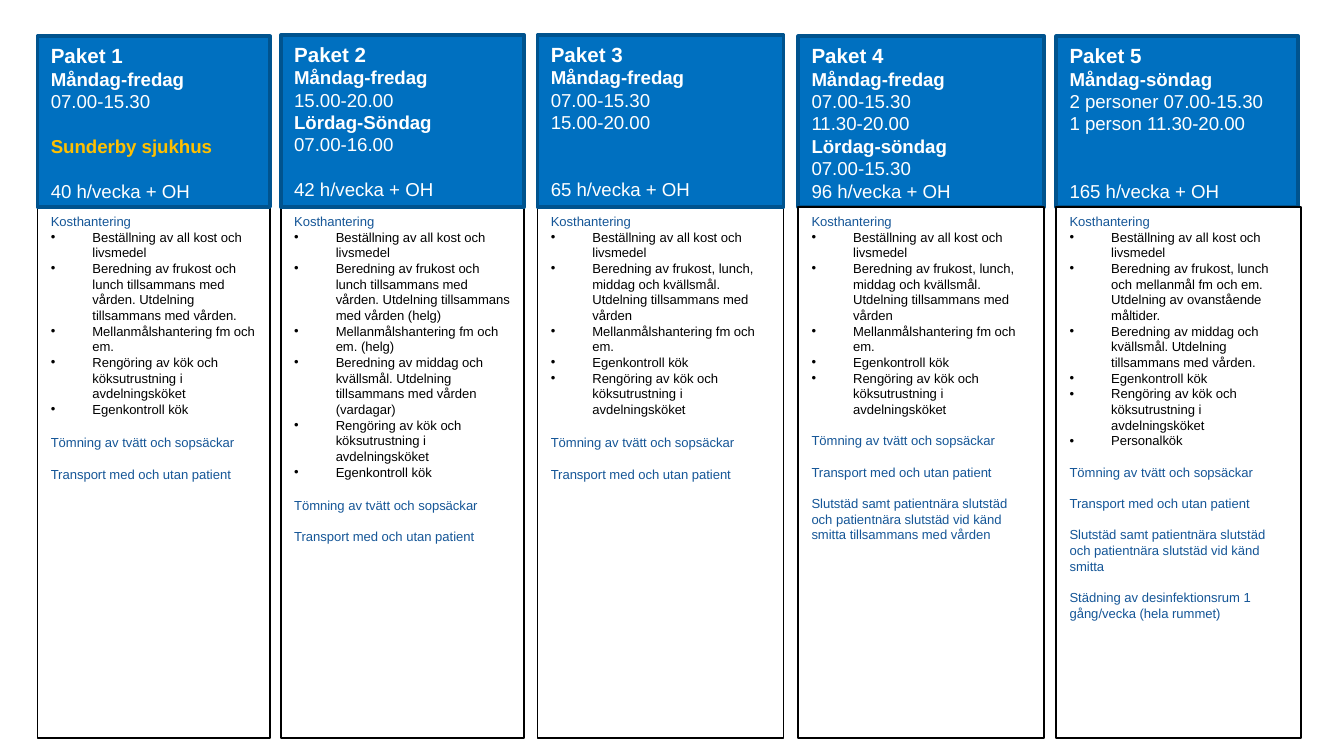
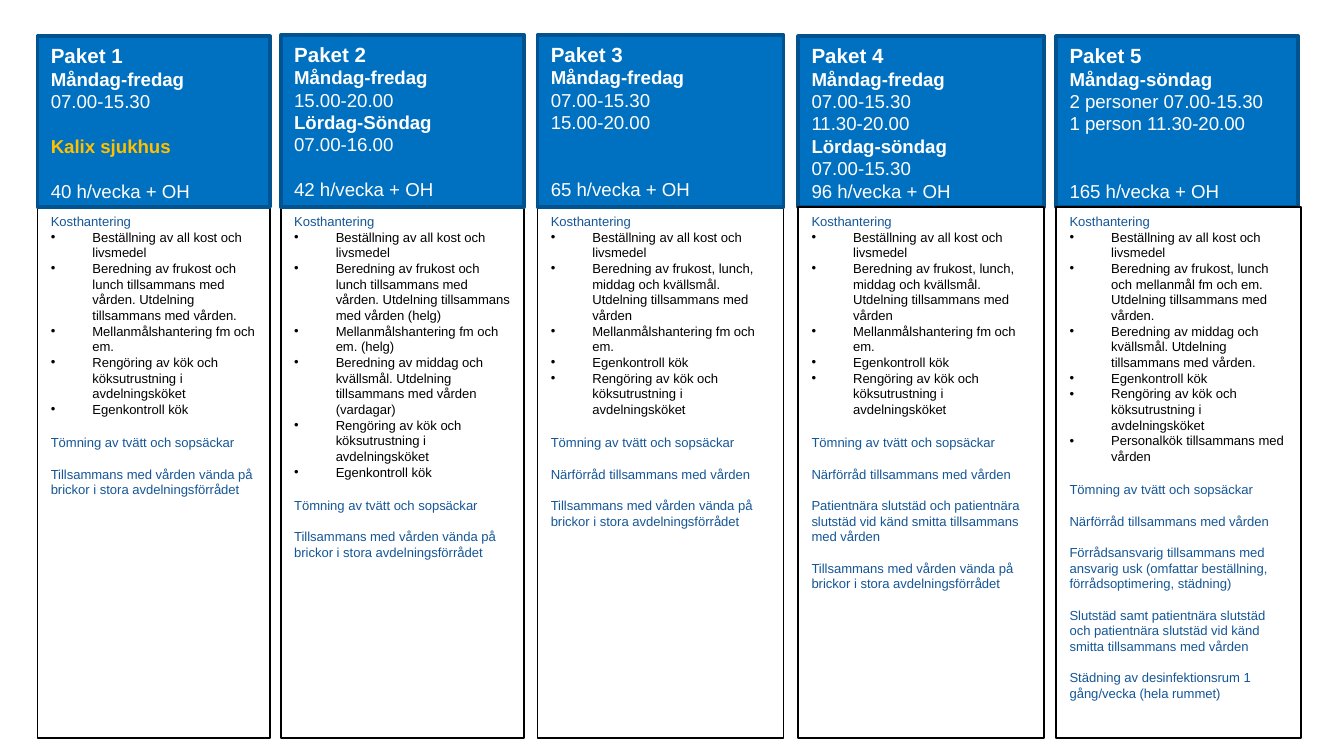
from dataclasses import dataclass

from lxml import etree
from pptx import Presentation
from pptx.dml.color import RGBColor
from pptx.enum import shapes, text
from pptx.oxml.ns import qn
from pptx.util import Inches, Pt


@dataclass(frozen=True)
class Theme:
    font: str = "Arial"
    white: str = "FFFFFF"
    black: str = "000000"
    header_fill: str = "0070C0"
    header_line: str = "00538E"
    heading: str = "155697"
    hospital: str = "FFC000"
    title_size: float = 11
    header_size: float = 10
    task_size: float = 7
    leading: float = 1.2
    first_gap: float = 9.4
    gap: float = 8.4
    indent: float = 0.31


@dataclass(frozen=True)
class Box:
    left: float
    top: float
    width: float
    height: float


THEME = Theme()
SLIDE_WIDTH = Inches(10)
SLIDE_HEIGHT = SLIDE_WIDTH * 9 // 16
HEADER_BOTTOM = 1.54
TASKS_HEIGHT = 3.95

# Text styles: size, colour, bold
STYLES = {
    "title": (THEME.title_size, THEME.white, True),
    "days": (THEME.header_size, THEME.white, True),
    "hours": (THEME.header_size, THEME.white, False),
    "hospital": (THEME.header_size, THEME.hospital, True),
    "heading": (THEME.task_size, THEME.heading, False),
    "bullet": (THEME.task_size, THEME.black, False),
}

# Left, header top, header width, tasks width
COLUMNS = [
    (0.28, 0.27, 1.73, 1.73),
    (2.09, 0.26, 1.81, 1.81),
    (4.0, 0.26, 1.83, 1.83),
    (5.94, 0.27, 1.83, 1.83),
    (7.86, 0.27, 1.8, 1.82),
]
TASKS_IN_FRONT = (3, 4)

ORDERING = "Beställning av all kost och livsmedel"
BREAKFAST_LUNCH = ("Beredning av frukost och lunch tillsammans med vården. "
                   "Utdelning tillsammans med vården")
ALL_MEALS = ("Beredning av frukost, lunch, middag och kvällsmål. "
             "Utdelning tillsammans med vården")
LUNCH_SNACKS = "Beredning av frukost, lunch och mellanmål fm och em. Utdelning "
DINNER = ("Beredning av middag och kvällsmål. "
          "Utdelning tillsammans med vården")
SNACKS = "Mellanmålshantering fm och em."
KITCHEN = "Rengöring av kök och köksutrustning i avdelningsköket"
CONTROL = "Egenkontroll kök"
LAUNDRY = "Tömning av tvätt och sopsäckar"
TRANSPORT = "Transport med och utan patient"
STORE = "Närförråd tillsammans med vården"
TAGS = "Tillsammans med vården vända på brickor i stora avdelningsförrådet"
FINAL_CLEANING = ("Slutstäd samt patientnära slutstäd och patientnära slutstäd "
                  "vid känd smitta")
FINAL_CLEANING_SHARED = FINAL_CLEANING + " tillsammans med vården"
PATIENT_CLEANING = ("Patientnära slutstäd och patientnära slutstäd vid känd "
                    "smitta tillsammans med vården")
STORE_MANAGER = ("Förrådsansvarig tillsammans med ansvarig usk (omfattar "
                 "beställning, förrådsoptimering, städning)")
DISINFECTION = "Städning av desinfektionsrum 1 gång/vecka (hela rummet)"

# Meal tasks of packages 1 to 4, the same at both hospitals
MEALS = [
    [ORDERING, BREAKFAST_LUNCH + ".", SNACKS, KITCHEN, CONTROL],
    [ORDERING, BREAKFAST_LUNCH + " (helg)", SNACKS + " (helg)",
     DINNER + " (vardagar)", KITCHEN, CONTROL],
    [ORDERING, ALL_MEALS, SNACKS, CONTROL, KITCHEN],
    [ORDERING, ALL_MEALS, SNACKS, CONTROL, KITCHEN],
]


def full_week_meals(serving, staff_kitchen):
    return [ORDERING, LUNCH_SNACKS + serving, DINNER + ".", CONTROL, KITCHEN,
            staff_kitchen]


# Hospital, meal tasks, other tasks, packages with a tight first gap
HOSPITALS = [
    ("Sunderby sjukhus",
     MEALS + [full_week_meals("av ovanstående måltider.", "Personalkök")],
     [[LAUNDRY, TRANSPORT],
      [LAUNDRY, TRANSPORT],
      [LAUNDRY, TRANSPORT],
      [LAUNDRY, TRANSPORT, FINAL_CLEANING_SHARED],
      [LAUNDRY, TRANSPORT, FINAL_CLEANING, DISINFECTION]],
     (3, 4)),
    ("Kalix sjukhus",
     MEALS + [full_week_meals("tillsammans med vården.",
                              "Personalkök tillsammans med vården")],
     [[LAUNDRY, TAGS],
      [LAUNDRY, TAGS],
      [LAUNDRY, STORE, TAGS],
      [LAUNDRY, STORE, PATIENT_CLEANING, TAGS],
      [LAUNDRY, STORE, STORE_MANAGER, FINAL_CLEANING_SHARED, DISINFECTION]],
     ()),
]


def schedules(hospital):
    """Give the header lines of each package: style, text, free lines above."""
    return [
        [("days", "Måndag-fredag", 0), ("hours", "07.00-15.30", 0),
         ("hospital", hospital, 1), ("hours", "40 h/vecka + OH", 1)],
        [("days", "Måndag-fredag", 0), ("hours", "15.00-20.00", 0),
         ("days", "Lördag-Söndag", 0), ("hours", "07.00-16.00", 0),
         ("hours", "42 h/vecka + OH", 1)],
        [("days", "Måndag-fredag", 0), ("hours", "07.00-15.30", 0),
         ("hours", "15.00-20.00", 0), ("hours", "65 h/vecka + OH", 2)],
        [("days", "Måndag-fredag", 0), ("hours", "07.00-15.30", 0),
         ("hours", "11.30-20.00", 0), ("days", "Lördag-söndag", 0),
         ("hours", "07.00-15.30", 0), ("hours", "96 h/vecka + OH", 0)],
        [("days", "Måndag-söndag", 0), ("hours", "2 personer 07.00-15.30", 0),
         ("hours", "1 person 11.30-20.00", 0), ("hours", "165 h/vecka + OH", 2)],
    ]


def set_all(target, values):
    for name, value in values.items():
        setattr(target, name, value)


def add_panel(page, box, fill, line, line_width):
    panel = page.shapes.add_shape(
        shapes.MSO_SHAPE.RECTANGLE, Inches(box.left), Inches(box.top),
        Inches(box.width), Inches(box.height))
    panel.shadow.inherit = False
    panel.fill.solid()
    panel.fill.fore_color.rgb = RGBColor.from_string(fill)
    panel.line.color.rgb = RGBColor.from_string(line)
    panel.line.width = Pt(line_width)
    set_all(panel.text_frame, {
        "word_wrap": True,
        "auto_size": text.MSO_AUTO_SIZE.NONE,
        "vertical_anchor": text.MSO_ANCHOR.TOP,
        "margin_left": Inches(0.1), "margin_right": Inches(0.1),
        "margin_top": Inches(0.05), "margin_bottom": Inches(0.05),
    })
    return panel.text_frame


def add_bullet(para):
    properties = para._p.get_or_add_pPr()
    properties.set("marL", str(Inches(THEME.indent)))
    properties.set("indent", str(-Inches(THEME.indent)))
    font = etree.SubElement(properties, qn("a:buFont"))
    font.set("typeface", THEME.font)
    etree.SubElement(properties, qn("a:buChar")).set("char", "•")


def write_lines(frame, lines):
    """Write (style, text, points of space before) as paragraphs."""
    for number, (style, wording, space) in enumerate(lines):
        para = frame.add_paragraph() if number else frame.paragraphs[0]
        size, color, bold = STYLES[style]
        set_all(para, {
            "alignment": text.PP_ALIGN.LEFT,
            "line_spacing": Pt(size * THEME.leading),
            "space_before": Pt(space),
        })
        if style == "bullet":
            add_bullet(para)
        span = para.add_run()
        span.text = wording
        set_all(span.font, {"name": THEME.font, "size": Pt(size), "bold": bold})
        span.font.color.rgb = RGBColor.from_string(color)


def add_header(page, box, title, schedule):
    frame = add_panel(page, box, THEME.header_fill, THEME.header_line, 2)
    pitch = THEME.header_size * THEME.leading
    write_lines(frame, [("title", title, 0)] + [
        (style, wording, free * pitch) for style, wording, free in schedule])


def add_tasks(page, box, meals, others, first_gap):
    frame = add_panel(page, box, THEME.white, THEME.black, 1)
    lines = [("heading", "Kosthantering", 0)]
    lines += [("bullet", meal, 0) for meal in meals]
    lines += [("heading", other, THEME.gap if number else first_gap)
              for number, other in enumerate(others)]
    write_lines(frame, lines)


def add_hospital_page(deck, hospital, meals, others, tight):
    page = deck.slides.add_slide(deck.slide_layouts[6])
    packages = zip(COLUMNS, schedules(hospital), meals, others)
    for number, (column, schedule, meal_tasks, other_tasks) in enumerate(packages):
        left, top, header_width, tasks_width = column
        header = Box(left, top, header_width, HEADER_BOTTOM - top)
        tasks = Box(left, HEADER_BOTTOM, tasks_width, TASKS_HEIGHT)
        first_gap = THEME.gap if number in tight else THEME.first_gap
        parts = [
            (add_tasks, tasks, meal_tasks, other_tasks, first_gap),
            (add_header, header, f"Paket {number + 1}", schedule),
        ]
        if number in TASKS_IN_FRONT:
            parts.reverse()
        for add_part, *details in parts:
            add_part(page, *details)


def main():
    deck = Presentation()
    set_all(deck, {"slide_width": SLIDE_WIDTH, "slide_height": SLIDE_HEIGHT})
    for hospital in HOSPITALS:
        add_hospital_page(deck, *hospital)
    deck.save("out.pptx")


if __name__ == "__main__":
    main()
